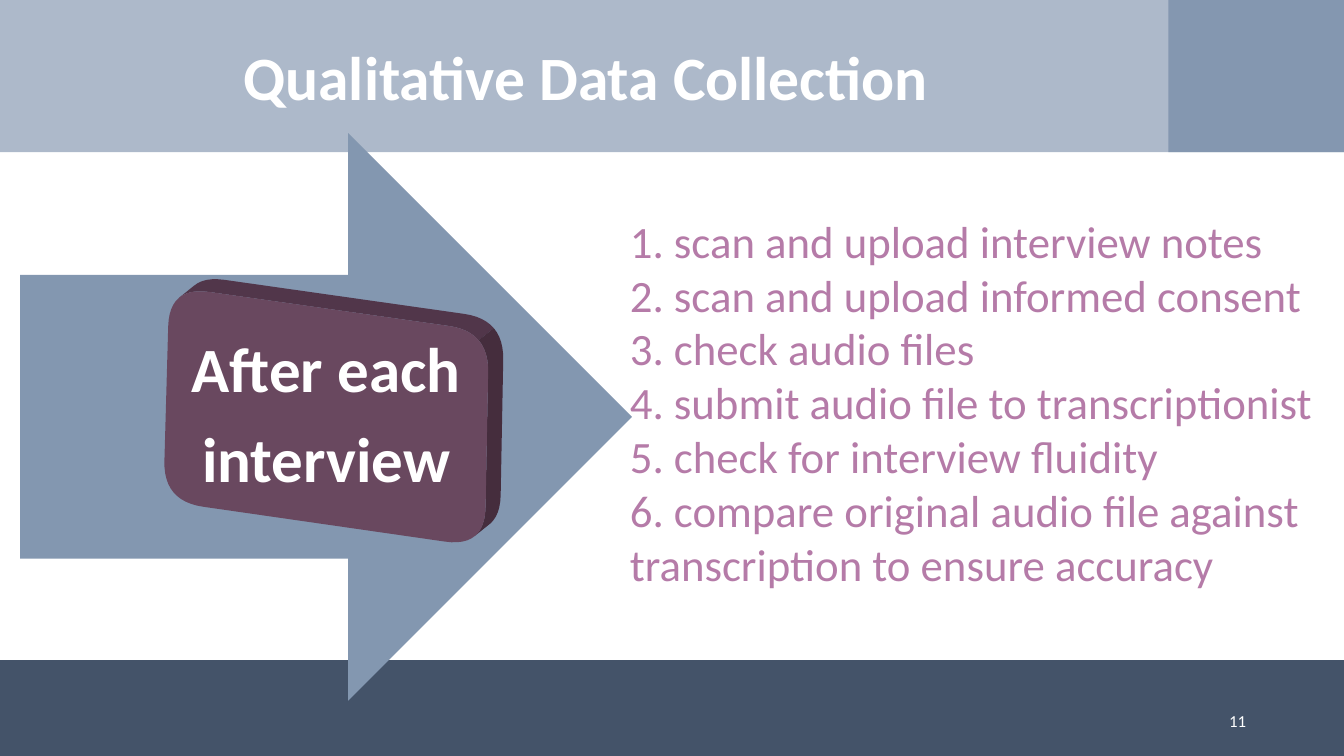
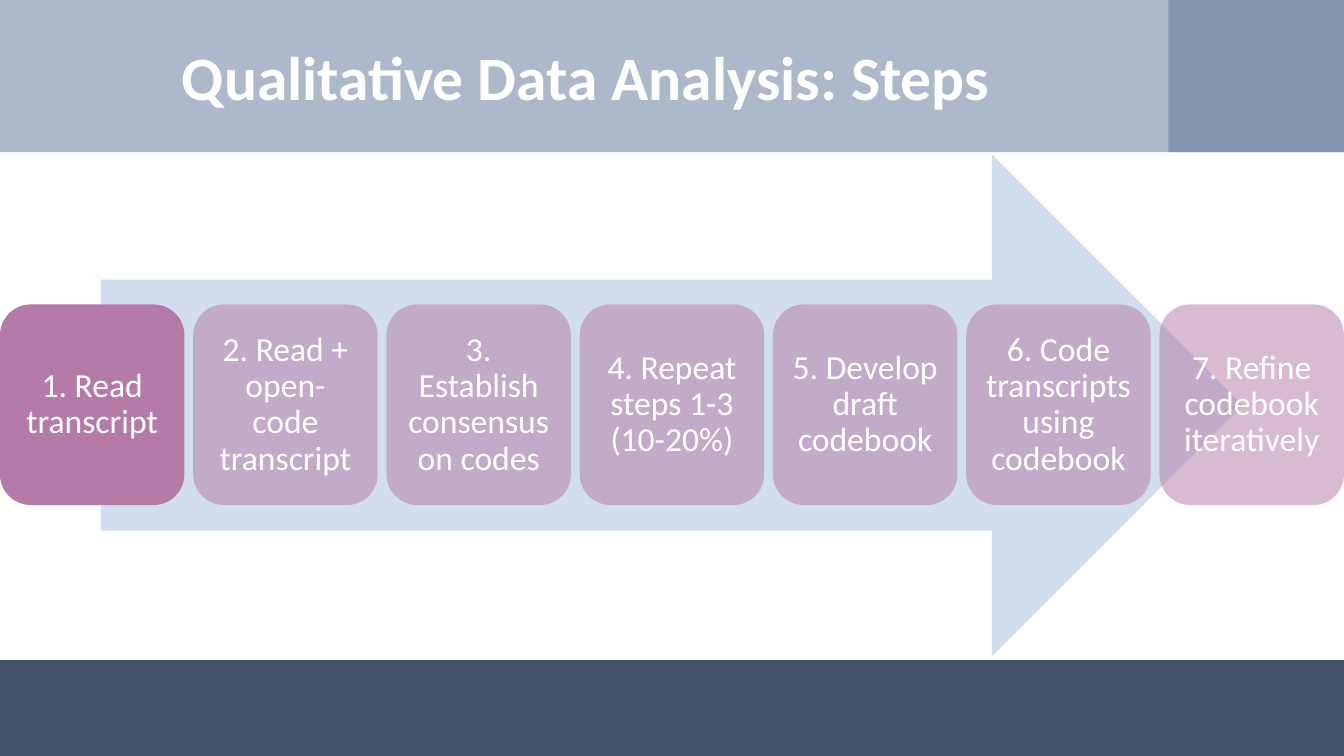
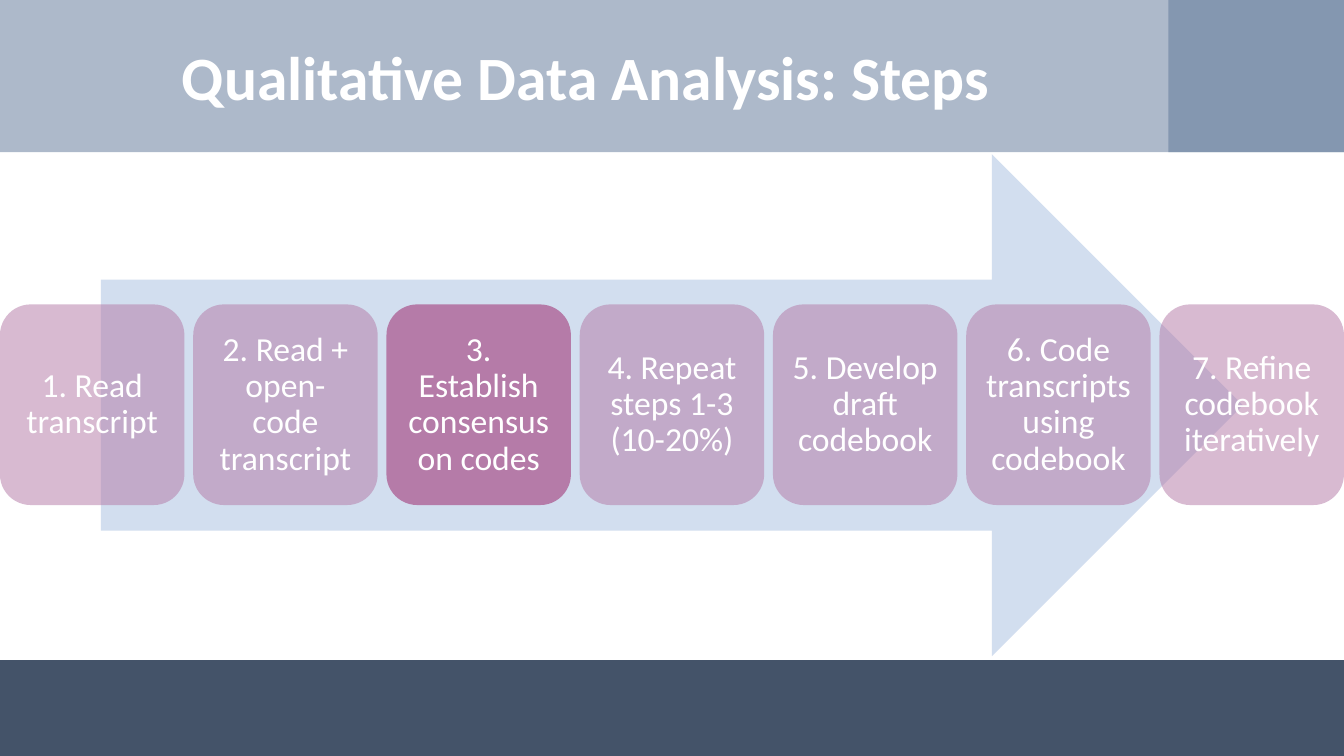
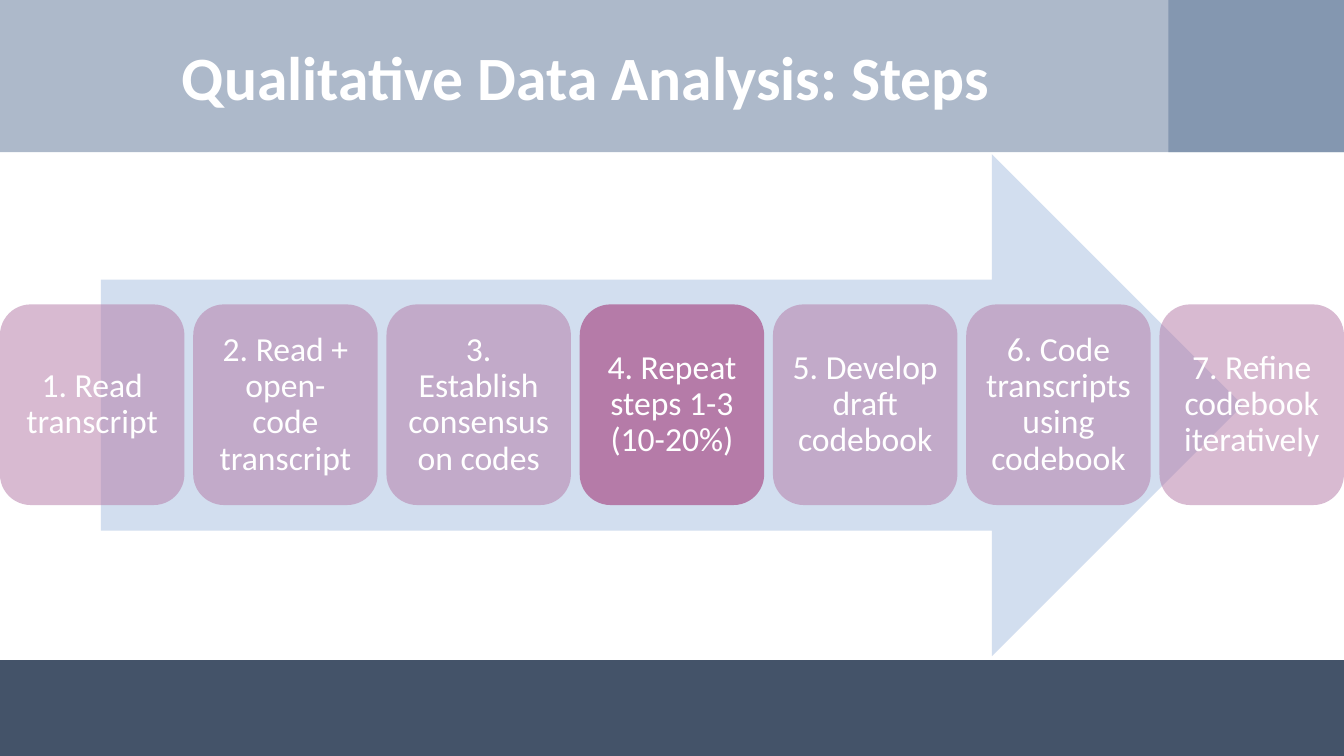
from pptx import Presentation
from pptx.dml.color import RGBColor
from pptx.enum.shapes import MSO_SHAPE
from pptx.enum.text import MSO_ANCHOR, PP_ALIGN
from pptx.oxml.ns import qn
from pptx.util import Inches, Pt
from lxml.etree import SubElement

WIDTH, HEIGHT = 13.333, 7.5
FONT = "Calibri"
WHITE, MAUVE = "FFFFFF", "B57BA8"
HEADER, CORNER, FOOTER = "ADB9CA", "8497B0", "445369"
COLLECTION_ARROW, STEPS_ARROW = "8397B0", "D2DEEF"
PLAQUE_FRONT, PLAQUE_TOP, PLAQUE_SIDE = "69485F", "51364A", "452D3D"

HEADER_HEIGHT, FOOTER_TOP, CORNER_LEFT = 1.51, 6.55, 11.59
CARD_TOP, CARD_WIDTH, CARD_HEIGHT = 3.02, 1.83, 1.99

TASKS = [
    "1. scan and upload interview notes",
    "2. scan and upload informed consent",
    "3. check audio files",
    "4. submit audio file to transcriptionist",
    "5. check for interview fluidity",
    "6. compare original audio file against transcription to ensure accuracy",
]
STEPS = [
    "1. Read transcript",
    "2. Read + open-code transcript",
    "3. Establish consensus on codes",
    "4. Repeat steps 1-3 (10-20%)",
    "5. Develop draft codebook",
    "6. Code transcripts using codebook",
    "7. Refine codebook iteratively",
]


def paint(shape, color, opacity=100):
    """Give a shape a flat fill without line or shadow."""
    shape.shadow.inherit = False
    shape.line.fill.background()
    shape.fill.solid()
    shape.fill.fore_color.rgb = RGBColor.from_string(color)
    if opacity < 100:
        color_element = shape.fill._xPr.find(qn("a:solidFill"))[0]
        SubElement(color_element, qn("a:alpha"), val=str(opacity * 1000))


def add_block(slide, preset, left, top, width, height, color, opacity=100):
    shape = slide.shapes.add_shape(
        preset, Inches(left), Inches(top), Inches(width), Inches(height))
    paint(shape, color, opacity)
    return shape


def write(shape, lines, size, color=WHITE, bold=False, align=PP_ALIGN.CENTER,
          anchor=MSO_ANCHOR.MIDDLE, inset=None, line_spacing=None, space_after=0):
    """Fill a shape with text; size, inset and space_after are in points."""
    frame = shape.text_frame
    frame.word_wrap = True
    frame.vertical_anchor = anchor
    if inset is not None:
        frame.margin_left = frame.margin_right = Pt(inset)
        frame.margin_top = frame.margin_bottom = Pt(inset)
    frame.text = "\n".join(lines)
    for paragraph in frame.paragraphs:
        paragraph.alignment = align
        paragraph.line_spacing = line_spacing
        paragraph.space_after = Pt(space_after)
        paragraph.font.name = FONT
        paragraph.font.size = Pt(size)
        paragraph.font.bold = bold
        paragraph.font.color.rgb = RGBColor.from_string(color)


def add_text(slide, left, top, width, height, lines, size, **style):
    box = slide.shapes.add_textbox(
        Inches(left), Inches(top), Inches(width), Inches(height))
    write(box, lines, size, **style)


def add_polygon(slide, points, color):
    # The builder rounds its points to whole units, so they are given in EMU
    vertices = [(Inches(x), Inches(y)) for x, y in points]
    builder = slide.shapes.build_freeform(*vertices[0])
    builder.add_line_segments(vertices[1:], close=True)
    paint(builder.convert_to_shape(), color)


def rounded_outline(corners, radius, steps):
    """Points along a polygon whose corners are rounded, steps + 1 per corner."""
    def toward(start, end):
        dx, dy = end[0] - start[0], end[1] - start[1]
        share = radius / (dx * dx + dy * dy) ** 0.5
        return start[0] + dx * share, start[1] + dy * share

    points = []
    for index, corner in enumerate(corners):
        first = toward(corner, corners[index - 1])
        last = toward(corner, corners[(index + 1) % len(corners)])
        for step in range(steps + 1):
            t = step / steps
            points.append(tuple(
                (1 - t) ** 2 * a + 2 * t * (1 - t) * b + t * t * c
                for a, b, c in zip(first, corner, last)))
    return points


def add_plaque(slide):
    """Tilted rounded plaque with a visible top and right side."""
    corners = [(1.68, 2.84), (4.85, 3.29), (4.81, 5.43), (1.62, 4.97)]
    depth_x, depth_y = 0.15, -0.12
    steps = 12
    front = rounded_outline(corners, 0.4, steps)
    for corner, color in enumerate((PLAQUE_TOP, PLAQUE_SIDE)):
        start = corner * (steps + 1) + steps // 2
        edge = front[start:start + steps + 2]
        back = [(x + depth_x, y + depth_y) for x, y in reversed(edge)]
        add_polygon(slide, edge + back, color)
    add_polygon(slide, front, PLAQUE_FRONT)
    add_text(slide, 1.65, 3.12, 3.17, 2.03, ["After each", "interview"], 45,
             bold=True, inset=13.7, line_spacing=0.9, space_after=15.75)


def add_base_slide(presentation, title):
    """Blank slide with the shared bands and title."""
    slide = presentation.slides.add_slide(presentation.slide_layouts[6])
    bands = [
        (0, 0, WIDTH, HEADER_HEIGHT, HEADER),
        (0, FOOTER_TOP, WIDTH, HEIGHT - FOOTER_TOP, FOOTER),
        (CORNER_LEFT, 0, WIDTH - CORNER_LEFT, HEADER_HEIGHT, CORNER),
    ]
    for band in bands:
        add_block(slide, MSO_SHAPE.RECTANGLE, *band)
    add_text(slide, 0, 0.4, 11.63, 0.8, [title], 44, bold=True,
             line_spacing=Pt(46))
    return slide


def add_collection_slide(presentation):
    slide = add_base_slide(presentation, "Qualitative Data Collection")
    add_text(slide, 11.42, 6.95, 1.04, 0.4, ["11"], 12, align=PP_ALIGN.RIGHT)
    add_block(slide, MSO_SHAPE.RIGHT_ARROW, 0.2, 1.32, 6.07, 5.63, COLLECTION_ARROW)
    add_plaque(slide)
    add_text(slide, 6.15, 2.07, 6.99, 3.87, TASKS, 32, color=MAUVE,
             align=PP_ALIGN.LEFT, anchor=MSO_ANCHOR.TOP)


def add_steps_slide(presentation, current):
    """Seven step cards on an arrow; only the current step is opaque."""
    slide = add_base_slide(presentation, "Qualitative Data Analysis: Steps")
    add_block(slide, MSO_SHAPE.RIGHT_ARROW, 1, 1.53, 11.33, 4.98, STEPS_ARROW)
    pitch = (WIDTH - CARD_WIDTH) / (len(STEPS) - 1)
    for index, step in enumerate(STEPS):
        card = add_block(slide, MSO_SHAPE.ROUNDED_RECTANGLE, index * pitch,
                         CARD_TOP, CARD_WIDTH, CARD_HEIGHT, MAUVE,
                         opacity=100 if index + 1 == current else 52)
        write(card, [step], 24, inset=7.3, line_spacing=0.9)


def main():
    presentation = Presentation()
    presentation.slide_width = Inches(WIDTH)
    presentation.slide_height = Inches(HEIGHT)
    add_collection_slide(presentation)
    for current in (1, 3, 4):
        add_steps_slide(presentation, current)
    presentation.save("out.pptx")


if __name__ == "__main__":
    main()
